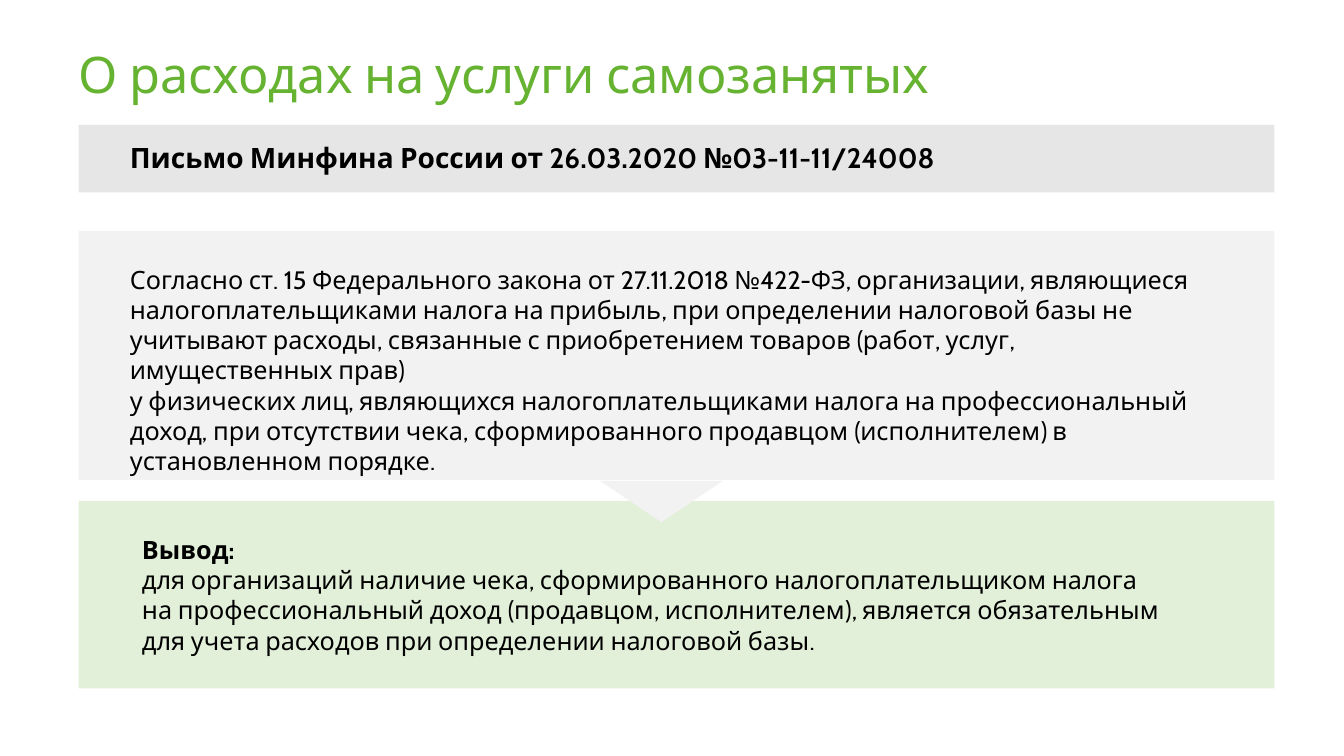
from pptx import Presentation
from pptx.dml.color import RGBColor
from pptx.enum.shapes import MSO_SHAPE
from pptx.enum.text import MSO_ANCHOR, MSO_AUTO_SIZE
from pptx.util import Emu, Pt

RECTANGLE = MSO_SHAPE.RECTANGLE
TRIANGLE = MSO_SHAPE.ISOSCELES_TRIANGLE
TOP, MIDDLE = MSO_ANCHOR.TOP, MSO_ANCHOR.MIDDLE
GROW, FIXED = MSO_AUTO_SIZE.SHAPE_TO_FIT_TEXT, MSO_AUTO_SIZE.NONE

PX = 9144  # 100 px to the inch
FONT = "Cabin"
BLACK, GREEN = "000000", "66B231"
GREY, LIGHT_GREY, LIGHT_GREEN = "E7E6E6", "F2F2F2", "E2F0D9"
PANEL_LEFT, PANEL_WIDTH = 78, 1186

TITLE = "О расходах на услуги самозанятых"
LETTER = "Письмо Минфина России от 26.03.2020 №03-11-11/24008"
RULE = (
    "Согласно ст. 15 Федерального закона от 27.11.2018 №422-ФЗ, организации, "
    "являющиеся налогоплательщиками налога на прибыль, при определении налоговой "
    "базы не учитывают расходы, связанные с приобретением товаров (работ, услуг, "
    "имущественных прав)\v"
    "у физических лиц, являющихся налогоплательщиками налога на профессиональный "
    "доход, при отсутствии чека, сформированного продавцом (исполнителем) в "
    "установленном порядке."
)
CONCLUSION = (
    "для организаций наличие чека, сформированного налогоплательщиком налога\v"
    "на профессиональный доход (продавцом, исполнителем), является обязательным\v"
    "для учета расходов при определении налоговой базы."
)


def px(*lengths):
    return [Emu(length * PX) for length in lengths]


def color(hex_value):
    return RGBColor.from_string(hex_value)


def add_filled_shape(slide, kind, box, fill):
    shape = slide.shapes.add_shape(kind, *px(*box))
    shape.shadow.inherit = False
    shape.fill.solid()
    shape.fill.fore_color.rgb = color(fill)
    shape.line.fill.background()
    return shape


def add_panel(slide, top, height, fill):
    return add_filled_shape(slide, RECTANGLE, (PANEL_LEFT, top, PANEL_WIDTH, height), fill)


def add_text(slide, box, paragraphs, size, text_color=BLACK, anchor=TOP, auto_size=GROW):
    """Add a text box; paragraphs is a list of (text, bold) pairs."""
    text_frame = slide.shapes.add_textbox(*px(*box)).text_frame
    text_frame.word_wrap = True
    text_frame.auto_size = auto_size
    text_frame.vertical_anchor = anchor
    text_frame.text = "\n".join(text for text, bold in paragraphs)
    for paragraph, (text, bold) in zip(text_frame.paragraphs, paragraphs):
        for run in paragraph.runs:
            run.font.name = FONT
            run.font.size = Pt(size)
            run.font.bold = bold
            run.font.color.rgb = color(text_color)
    return text_frame


def main():
    presentation = Presentation()
    presentation.slide_width, presentation.slide_height = px(1333, 750)
    slide = presentation.slides.add_slide(presentation.slide_layouts[6])

    # Title
    title = add_text(slide, (68, 42, 1197, 69), [(TITLE, False)], 36, GREEN, MIDDLE, FIXED)
    title.paragraphs[0].line_spacing = 0.9

    # Letter reference
    add_panel(slide, 124, 67, GREY)
    add_text(slide, (119, 134, 1075, 44), [(LETTER, True)], 20)

    # Rule quoted from the law
    add_panel(slide, 229, 247, LIGHT_GREY)
    add_text(slide, (119, 257, 1083, 192), [(RULE, False)], 18)

    # Conclusion
    add_panel(slide, 497, 186, LIGHT_GREEN)
    add_text(slide, (131, 525, 1092, 131), [("Вывод:", True), (CONCLUSION, False)], 18)

    # Pointer from the rule to the conclusion
    pointer = add_filled_shape(slide, TRIANGLE, (595, 477, 122, 41), LIGHT_GREY)
    pointer.rotation = 180

    presentation.save("out.pptx")


if __name__ == "__main__":
    main()
